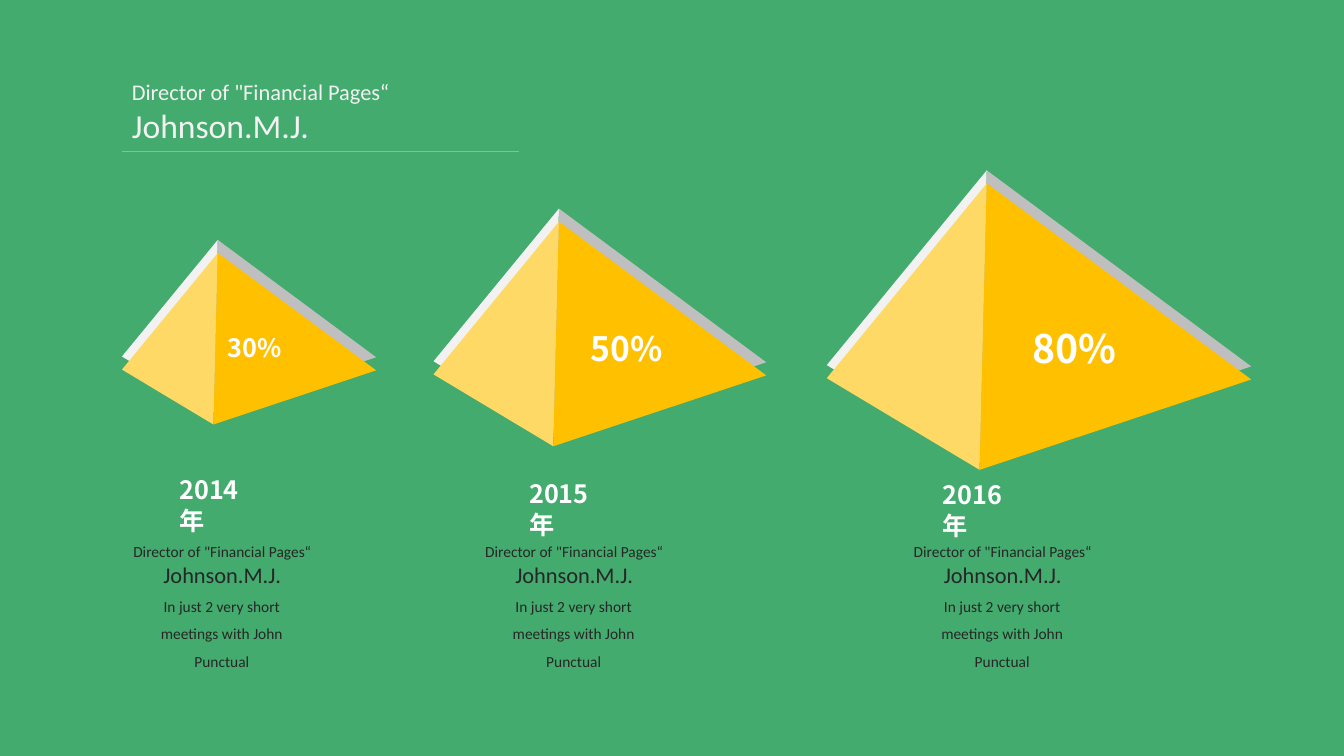
from lxml.etree import SubElement
from pptx import Presentation
from pptx.dml.color import RGBColor
from pptx.enum.shapes import MSO_CONNECTOR
from pptx.enum.text import PP_ALIGN
from pptx.oxml.ns import qn
from pptx.util import Inches, Pt

LATIN, CJK = "Calibri", "Noto Sans CJK SC"
WHITE, PALE, GREY, DARK = "FFFFFF", "F2F2F2", "BFBFBF", "262626"
GREEN, LIME, GOLD, LIGHT_GOLD = "43AB6D", "87CA5D", "FFC000", "FFD966"

ROLE = 'Director of "Financial Pages“'
NAME = "Johnson.M.J."
NOTE = "In just 2 very short meetings with John Punctual"

# Pyramid corners as fractions of the pyramid's width
APEX, LEFT, RIGHT, BASE = (0.377, 0), (0, 0.459), (1, 0.462), (0.36, 0.675)
FRONT_DROP = 0.13

# Pyramid left, top, width; percentage, its box and size; year, its left and top; caption left
PYRAMIDS = [
    (1.21, 2.38, 2.52, "30%", (2.16, 3.25, 0.75, 0.4), 18, "2014年", 1.68, 4.66, 1.21),
    (4.3, 2.07, 3.3, "50%", (5.76, 3.2, 0.93, 0.5), 24, "2015年", 5.15, 4.7, 4.7),
    (8.2, 1.69, 4.21, "80%", (10.14, 3.17, 1.05, 0.57), 28, "2016年", 9.25, 4.71, 8.95),
]


def rgb(color):
    return RGBColor.from_string(color)


def add_text(shapes, box, lines, color, font=LATIN, bold=False, align=PP_ALIGN.LEFT,
             spacing=None, wrap=False, right_margin=0.1):
    """Add a text box; lines holds a (text, size) pair for each paragraph."""
    tf = shapes.add_textbox(*map(Inches, box)).text_frame
    tf.word_wrap = wrap
    tf.margin_right = Inches(right_margin)
    for i, (text, size) in enumerate(lines):
        p = tf.add_paragraph() if i else tf.paragraphs[0]
        p.alignment = align
        p.line_spacing = spacing
        r = p.add_run()
        r.text = text
        r.font.size = Pt(size)
        r.font.bold = bold
        r.font.name = font
        r.font.color.rgb = rgb(color)
        SubElement(r.font._element, qn("a:ea"), typeface=font)


def add_face(shapes, points, color):
    corners = [(Inches(x), Inches(y)) for x, y in points]
    builder = shapes.build_freeform(*corners[0])
    builder.add_line_segments(corners[1:], close=True)
    sp = builder.convert_to_shape()
    sp.shadow.inherit = False
    sp.fill.solid()
    sp.fill.fore_color.rgb = rgb(color)
    sp.line.fill.background()


def add_pyramid(shapes, left, top, width, left_color, right_color):
    for side, color in ((LEFT, left_color), (RIGHT, right_color)):
        points = [(left + x * width, top + y * width) for x, y in (APEX, side, BASE)]
        add_face(shapes, points, color)


def add_rule(shapes, x1, x2, y, color):
    ends = map(Inches, (x1, y, x2, y))
    line = shapes.add_connector(MSO_CONNECTOR.STRAIGHT, *ends)
    line.line.color.rgb = rgb(color)
    line.line.width = Pt(0.75)
    SubElement(line._element.spPr, qn("a:effectLst"))


def add_caption(shapes, left):
    add_text(shapes, (left, 5.33, 1.99, 0.56), [(ROLE, 11), (NAME, 16)], DARK,
             align=PP_ALIGN.CENTER)
    add_text(shapes, (left + 0.18, 5.78, 1.62, 0.91), [(NOTE, 11)], DARK,
             align=PP_ALIGN.CENTER, spacing=1.5, wrap=True)


def main():
    prs = Presentation()
    prs.slide_width, prs.slide_height = Inches(13.33), Inches(7.5)
    s = prs.slides.add_slide(prs.slide_layouts[6])
    s.background.fill.solid()
    s.background.fill.fore_color.rgb = rgb(GREEN)
    shapes = s.shapes

    add_text(shapes, (1.21, 0.73, 3.94, 0.77), [(ROLE, 16), (NAME, 24)], PALE, wrap=True)
    add_rule(shapes, 1.21, 5.15, 1.5, LIME)

    for left, top, width, share, share_box, size, year, year_x, year_y, caption_x in PYRAMIDS:
        add_pyramid(shapes, left, top, width, PALE, GREY)
        front = shapes.add_group_shape()
        add_pyramid(front.shapes, left, top + FRONT_DROP, width, LIGHT_GOLD, GOLD)
        add_text(shapes, share_box, [(share, size)], WHITE, CJK, bold=True)
        # The wide right margin sends the last character to a second line
        add_text(shapes, (year_x, year_y, 1.08, 0.4), [(year, 18)], WHITE, CJK, bold=True,
                 wrap=True, right_margin=0.25)
        add_caption(shapes, caption_x)

    prs.save("out.pptx")


if __name__ == "__main__":
    main()
